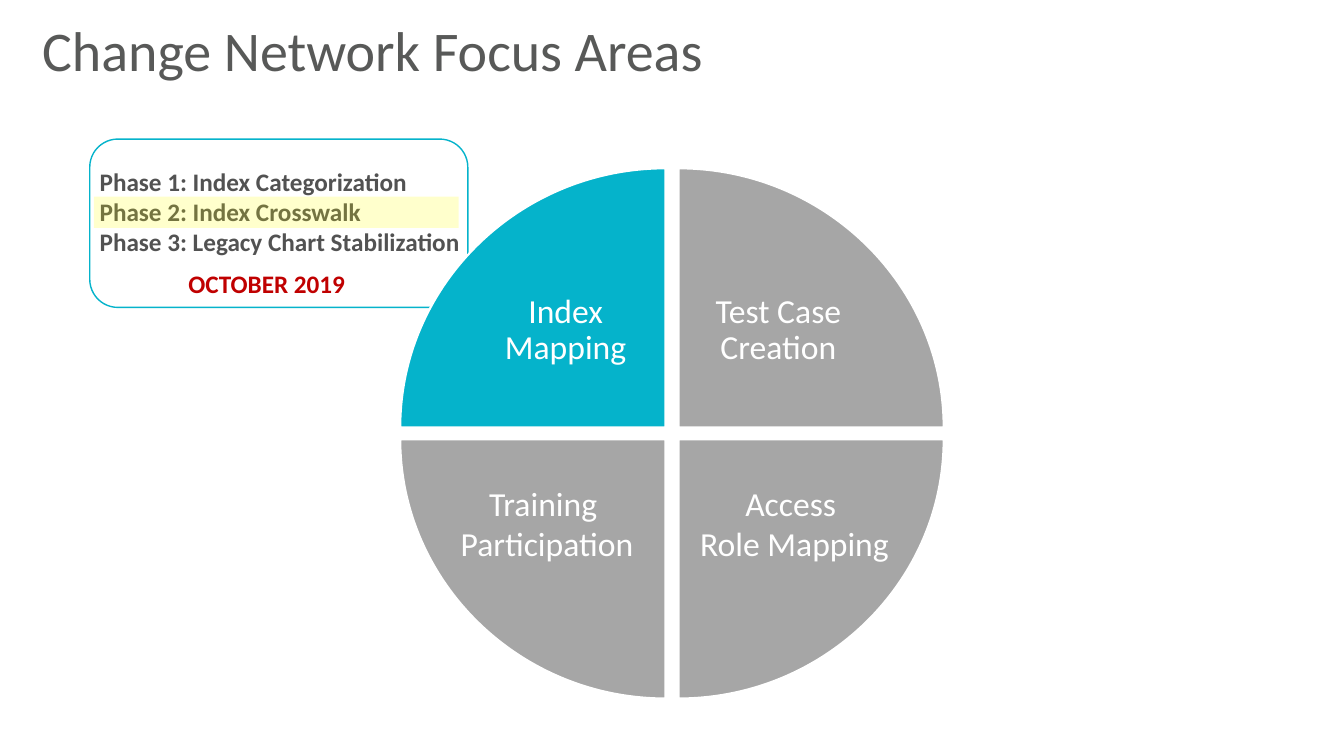
from pptx import Presentation
from pptx.dml.color import RGBColor
from pptx.enum.shapes import MSO_SHAPE
from pptx.enum.text import MSO_ANCHOR, PP_ALIGN
from pptx.oxml.ns import qn
from pptx.util import Pt
from lxml.etree import SubElement

PX = 9144
TEAL, GRAY, WHITE = "05B3CB", "A6A6A6", "FFFFFF"


def color(value):
    return RGBColor.from_string(value)


def write(tf, paragraphs, size, font_color, bold=False, align=PP_ALIGN.LEFT, spacing=1.0):
    for i, lines in enumerate(paragraphs):
        p = tf.paragraphs[0] if i == 0 else tf.add_paragraph()
        p.alignment = align
        p.line_spacing = spacing
        for j, line in enumerate(lines):
            if j:
                p.add_line_break()
            r = p.add_run()
            r.text = line
            r.font.name = "Calibri"
            r.font.size = Pt(size)
            r.font.bold = bold
            r.font.color.rgb = color(font_color)


prs = Presentation()
prs.slide_width = 1333 * PX
prs.slide_height = 750 * PX
s = prs.slides.add_slide(prs.slide_layouts[6])

frame = s.shapes.add_shape(MSO_SHAPE.ROUNDED_RECTANGLE, 89 * PX, 138 * PX, 375 * PX, 167 * PX)
frame.shadow.inherit = False
frame.fill.background()
frame.line.color.rgb = color(TEAL)
frame.line.width = Pt(1)

title = s.shapes.add_textbox(32 * PX, 18 * PX, 1235 * PX, 82 * PX)
tf = title.text_frame
tf.word_wrap = True
write(tf, [["Change Network Focus Areas"]], 40, "585958", spacing=0.9)

RX, RY, KAPPA = 263, 257, 0.55
quarters = [
    (660, 424, -1, -1, TEAL, "Index Mapping"),
    (673, 424, 1, -1, GRAY, "Test Case Creation"),
    (673, 436, 1, 1, GRAY, None),
    (660, 436, -1, 1, GRAY, None),
]
for x, y, dx, dy, fill, label in quarters:
    curve = [(1, 0), (1, KAPPA), (KAPPA, 1), (0, 1)]
    if dx != dy:
        curve.reverse()
    points = [((x + dx * RX * u) * PX, (y + dy * RY * v) * PX) for u, v in curve]
    builder = s.shapes.build_freeform(*points[0])
    builder.add_line_segments(points[1:] + [(x * PX, y * PX), points[0]], close=True)
    sp = builder.convert_to_shape()
    arc, *handles = list(sp._element.iter(qn("a:lnTo")))[:3]
    arc.tag = qn("a:cubicBezTo")
    for handle in handles:
        arc.append(handle[0])
        handle.getparent().remove(handle)
    sp.shadow.inherit = False
    sp.fill.solid()
    sp.fill.fore_color.rgb = color(fill)
    sp.line.color.rgb = color(WHITE)
    sp.line.width = Pt(1.5)
    if label:
        tf = sp.text_frame
        tf.word_wrap = True
        tf.vertical_anchor = MSO_ANCHOR.MIDDLE
        tf.margin_left = (79 if dx < 0 else 14) * PX
        tf.margin_right = (14 if dx < 0 else 79) * PX
        tf.margin_top = 79 * PX
        tf.margin_bottom = 14 * PX
        write(tf, [[label]], 24, WHITE, align=PP_ALIGN.CENTER, spacing=0.9)

lower_labels = [
    (405, 275, 121, [["Training "], ["Participation"]]),
    (677, 222, 131, [["Access ", "Role Mapping"]]),
]
for left, width, height, paragraphs in lower_labels:
    box = s.shapes.add_textbox(left * PX, 474 * PX, width * PX, height * PX)
    tf = box.text_frame
    tf.word_wrap = True
    write(tf, paragraphs, 24, WHITE, align=PP_ALIGN.CENTER)

phases = s.shapes.add_textbox(89 * PX, 160 * PX, 393 * PX, 101 * PX)
tf = phases.text_frame
tf.word_wrap = True
write(tf, [
    ["Phase 1: Index Categorization"],
    ["Phase 2: Index Crosswalk ", "Phase 3: Legacy Chart Stabilization "],
], 18, "525252", bold=True)

highlight = s.shapes.add_shape(MSO_SHAPE.RECTANGLE, 93 * PX, 195 * PX, 362 * PX, 31 * PX)
highlight.shadow.inherit = False
highlight.fill.solid()
highlight.fill.fore_color.rgb = color("FFFF00")
highlight.line.fill.background()
srgb = next(highlight._element.iter(qn("a:srgbClr")))
SubElement(srgb, qn("a:alpha")).set("val", "20000")

date = s.shapes.add_textbox(177 * PX, 261 * PX, 177 * PX, 40 * PX)
tf = date.text_frame
tf.word_wrap = False
write(tf, [["OCTOBER 2019"]], 18, "C00000", bold=True)

prs.save("out.pptx")
